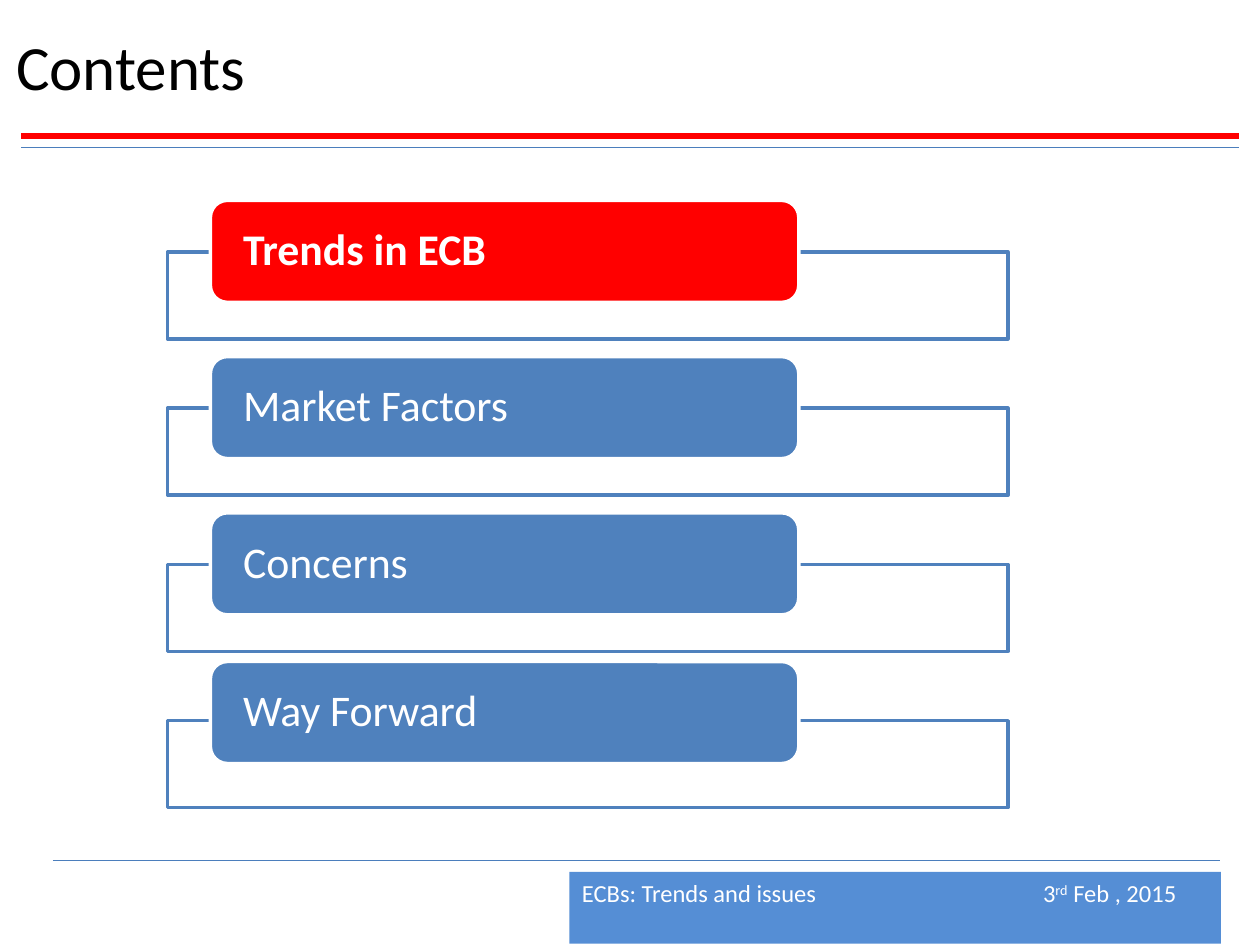
from lxml import etree
from pptx import Presentation
from pptx.dml.color import RGBColor
from pptx.enum.shapes import MSO_CONNECTOR, MSO_SHAPE
from pptx.enum.text import MSO_ANCHOR, PP_ALIGN
from pptx.oxml.ns import qn
from pptx.util import Inches, Pt

STRAIGHT = MSO_CONNECTOR.STRAIGHT
RECTANGLE, ROUNDED = MSO_SHAPE.RECTANGLE, MSO_SHAPE.ROUNDED_RECTANGLE
TOP, MIDDLE = MSO_ANCHOR.TOP, MSO_ANCHOR.MIDDLE
LEFT = PP_ALIGN.LEFT

COLORS = {
    "accent": "FF0000",
    "blue": "4F81BD",
    "rule": "4B7EBC",
    "footer": "558ED5",
    "white": "FFFFFF",
    "black": "000000",
}
FONT = "Calibri"
TOPICS = [
    ("Trends in ECB", 1.59),
    ("Market Factors", 2.83),
    ("Concerns", 4.07),
    ("Way Forward", 5.25),
]
FRAME_TOP, FRAME_STEP = 2, 1.24


def rgb(name):
    """Return the palette colour with the given name."""
    return RGBColor.from_string(COLORS[name])


def write(shape, *pieces, size, color="white", bold=False, anchor=MIDDLE,
          margin=0.1, margin_y=0.05, spacing=None, tab=None, raised=()):
    """Write the pieces as one paragraph, lifting those listed in raised."""
    frame = shape.text_frame
    frame.word_wrap = True
    frame.vertical_anchor = anchor
    frame.margin_left = frame.margin_right = Inches(margin)
    frame.margin_top = frame.margin_bottom = Inches(margin_y)
    paragraph = frame.paragraphs[0]
    paragraph.alignment = LEFT
    if spacing:
        paragraph.line_spacing = spacing
    if tab:
        stops = etree.SubElement(paragraph._p.get_or_add_pPr(), qn("a:tabLst"))
        etree.SubElement(stops, qn("a:tab"), pos=str(Inches(tab)), algn="l")
    for piece in pieces:
        run = paragraph.add_run()
        run.text = piece
        run.font.name = FONT
        run.font.size = Pt(size)
        run.font.bold = bold
        run.font.color.rgb = rgb(color)
        if piece in raised:
            run._r.get_or_add_rPr().set("baseline", "30000")


def add_rule(slide, left, right, y, color, width):
    """Draw a horizontal rule without a shadow."""
    rule = slide.shapes.add_connector(
        STRAIGHT, Inches(left), Inches(y), Inches(right), Inches(y))
    rule.line.color.rgb = rgb(color)
    rule.line.width = Pt(width)
    etree.SubElement(rule._element.spPr, qn("a:effectLst"))


def add_box(slide, kind, left, top, width, height, fill, line=None, opacity=None):
    """Draw a filled box with an optional outline and opacity percentage."""
    box = slide.shapes.add_shape(
        kind, Inches(left), Inches(top), Inches(width), Inches(height))
    box.shadow.inherit = False
    box.fill.solid()
    box.fill.fore_color.rgb = rgb(fill)
    if opacity:
        shade = box._element.spPr.find(qn("a:solidFill"))[0]
        etree.SubElement(shade, qn("a:alpha"), val=str(opacity * 1000))
    if line:
        box.line.color.rgb = rgb(line)
        box.line.width = Pt(2)
    else:
        box.line.fill.background()
    return box


def add_header(slide):
    """Add the title and the double rule below it."""
    title = slide.shapes.add_textbox(
        Inches(0.03), Inches(0.03), Inches(9.97), Inches(0.97))
    write(title, "Contents", size=36, color="black")
    add_rule(slide, 0.17, 9.83, 1.08, "accent", 3)
    add_rule(slide, 0.17, 9.83, 1.17, "rule", 0.75)


def add_topic(slide, name, label_top, frame_top, current):
    """Add a topic label over its frame, highlighted when current."""
    add_box(slide, RECTANGLE, 1.33, frame_top, 6.67, 0.69, "white", "blue", opacity=90)
    label = add_box(slide, ROUNDED, 1.67, label_top, 4.67, 0.81,
                    "accent" if current else "blue", "white")
    write(label, name, size=25, bold=current, margin=0.22, margin_y=0, spacing=0.9)


def add_footer(slide):
    """Add the footer band with the talk name and date."""
    band = add_box(slide, RECTANGLE, 4.52, 6.92, 5.17, 0.57, "footer")
    write(band, "ECBs: Trends and issues\t3", "rd", " Feb , 2015",
          size=14, anchor=TOP, tab=3.66, raised=("rd",))
    add_rule(slide, 0.42, 9.68, 6.83, "rule", 0.75)


def main():
    """Build the contents slide and save it."""
    deck = Presentation()
    deck.slide_width, deck.slide_height = Inches(10), Inches(7.5)
    slide = deck.slides.add_slide(deck.slide_layouts[6])
    add_header(slide)
    for index, (name, label_top) in enumerate(TOPICS):
        add_topic(slide, name, label_top, FRAME_TOP + index * FRAME_STEP, index == 0)
    add_footer(slide)
    deck.save("out.pptx")


if __name__ == "__main__":
    main()
